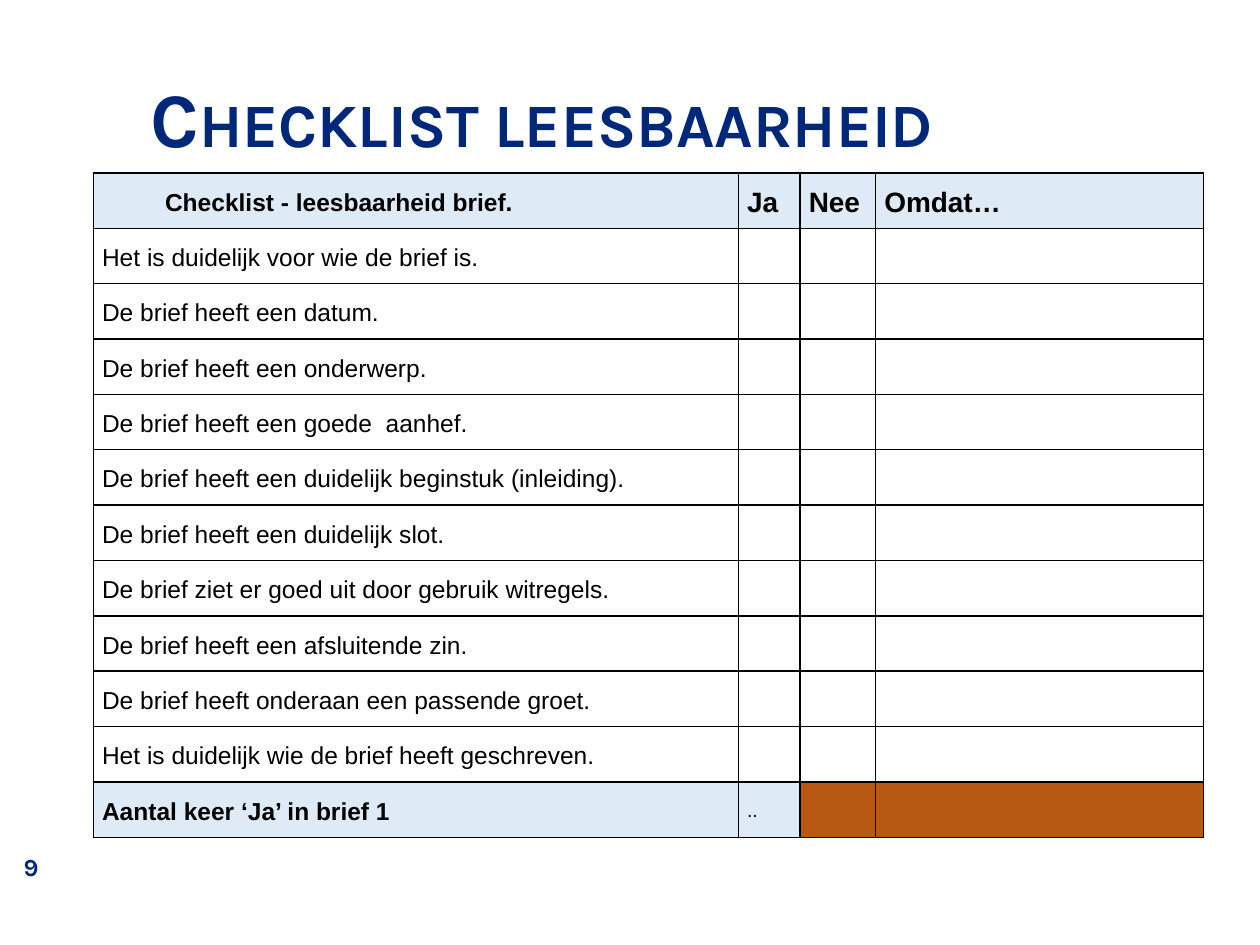
from lxml.etree import SubElement
from pptx import Presentation
from pptx.dml.color import RGBColor
from pptx.enum.text import MSO_ANCHOR as Anchor, PP_ALIGN as Align
from pptx.oxml.ns import qn
from pptx.util import Inches, Pt

NAVY = RGBColor(0x00, 0x28, 0x7A)
BLACK = RGBColor(0x00, 0x00, 0x00)
PALE_BLUE = RGBColor(0xDE, 0xEA, 0xF6)
BROWN = RGBColor(0xB7, 0x58, 0x13)

WIDTH, HEIGHT = 10, 7.5
COLUMNS = [0.512, 0.049, 0.06, 0.26]  # shares of the slide width
ROW = 0.0586  # share of the slide height

HEADINGS = ["Checklist - leesbaarheid brief.", "Ja", "Nee", "Omdat…"]
CRITERIA = [
    "Het is duidelijk voor wie de brief is.",
    "De brief heeft een datum.",
    "De brief heeft een onderwerp.",
    "De brief heeft een goede  aanhef.",
    "De brief heeft een duidelijk beginstuk (inleiding).",
    "De brief heeft een duidelijk slot.",
    "De brief ziet er goed uit door gebruik witregels.",
    "De brief heeft een afsluitende zin.",
    "De brief heeft onderaan een passende groet.",
    "Het is duidelijk wie de brief heeft geschreven.",
]
TOTALS = ["Aantal keer ‘Ja’ in brief 1", "..", "", ""]


class SlideBuilder:
    heading_font = "Karla"
    body_font = "Arial"

    def __init__(self, deck):
        self.slide = deck.slides.add_slide(deck.slide_layouts[6])

    def place(self, left, top, width, height):
        """Turn shares of the slide into lengths."""
        return (Inches(left * WIDTH), Inches(top * HEIGHT),
                Inches(width * WIDTH), Inches(height * HEIGHT))

    def add_span(self, para, text, font, size, color, bold):
        span = para.add_run()
        span.text = text
        span.font.name = font
        span.font.size = Pt(size)
        span.font.bold = bold
        span.font.color.rgb = color
        return span

    def add_heading(self, text, place, size, anchor, small_caps=False):
        box = self.slide.shapes.add_textbox(*self.place(*place))
        frame = box.text_frame
        frame.word_wrap = True
        frame.vertical_anchor = anchor
        frame.margin_left = frame.margin_top = frame.margin_bottom = 0
        frame.margin_right = Inches(0.1)
        para = frame.paragraphs[0]
        para.alignment = Align.CENTER
        span = self.add_span(para, text, self.heading_font, size, NAVY, True)
        if small_caps:
            span.font._element.set("cap", "small")

    def add_table(self, left, top, columns, row_height, row_count):
        place = self.place(left, top, sum(columns), row_height * row_count)
        table = self.slide.shapes.add_table(row_count, len(columns), *place).table
        table.first_row = table.horz_banding = False
        for column, share in zip(table.columns, columns):
            column.width = Inches(share * WIDTH)
        for row in table.rows:
            row.height = Inches(row_height * HEIGHT)
        return table

    def style_cell(self, cell, fill=None, top=1, bottom=1):
        borders = {"a:lnL": 1, "a:lnR": 1, "a:lnT": top, "a:lnB": bottom}
        properties = cell._tc.get_or_add_tcPr()
        for tag, width in borders.items():
            line = SubElement(properties, qn(tag), w=str(Pt(width)))
            solid = SubElement(line, qn("a:solidFill"))
            SubElement(solid, qn("a:srgbClr"), val=str(BLACK))
        if fill is None:
            cell.fill.background()
        else:
            cell.fill.solid()
            cell.fill.fore_color.rgb = fill
        cell.vertical_anchor = Anchor.MIDDLE
        cell.margin_left = cell.margin_right = Inches(0.07)
        cell.margin_top = cell.margin_bottom = 0

    def write_cell(self, cell, text, size=14, bold=False, indent=0):
        para = cell.text_frame.paragraphs[0]
        para.line_spacing = 1.15
        if indent:
            para._p.get_or_add_pPr().set("marL", str(Inches(indent)))
        self.add_span(para, text, self.body_font, size, BLACK, bold)


def main():
    deck = Presentation()
    deck.slide_width, deck.slide_height = Inches(WIDTH), Inches(HEIGHT)
    page = SlideBuilder(deck)

    # Title and page number
    page.add_heading("Checklist leesbaarheid", (0, 0.045, 0.87, 0.157), 44,
                     Anchor.MIDDLE, small_caps=True)
    page.add_heading("9", (0, 0.876, 0.059, 0.057), 14, Anchor.BOTTOM)

    # Checklist table
    last = len(CRITERIA) + 1
    table = page.add_table(0.074, 0.183, COLUMNS, ROW, last + 1)

    # Header row
    for index, text in enumerate(HEADINGS):
        cell = table.cell(0, index)
        page.style_cell(cell, PALE_BLUE)
        page.write_cell(cell, text, size=16 if index else 14, bold=True,
                        indent=0 if index else 0.5)

    # Criteria, with a heavier line above the totals
    for row, text in enumerate(CRITERIA, start=1):
        for index in range(len(COLUMNS)):
            page.style_cell(table.cell(row, index),
                            bottom=1.5 if row == last - 1 else 1)
        page.write_cell(table.cell(row, 0), text)

    # Totals row
    for index, text in enumerate(TOTALS):
        cell = table.cell(last, index)
        page.style_cell(cell, PALE_BLUE if text else BROWN, top=1.5)
        if text:
            page.write_cell(cell, text, size=11 if index else 14, bold=index == 0)

    deck.save("out.pptx")


if __name__ == "__main__":
    main()
